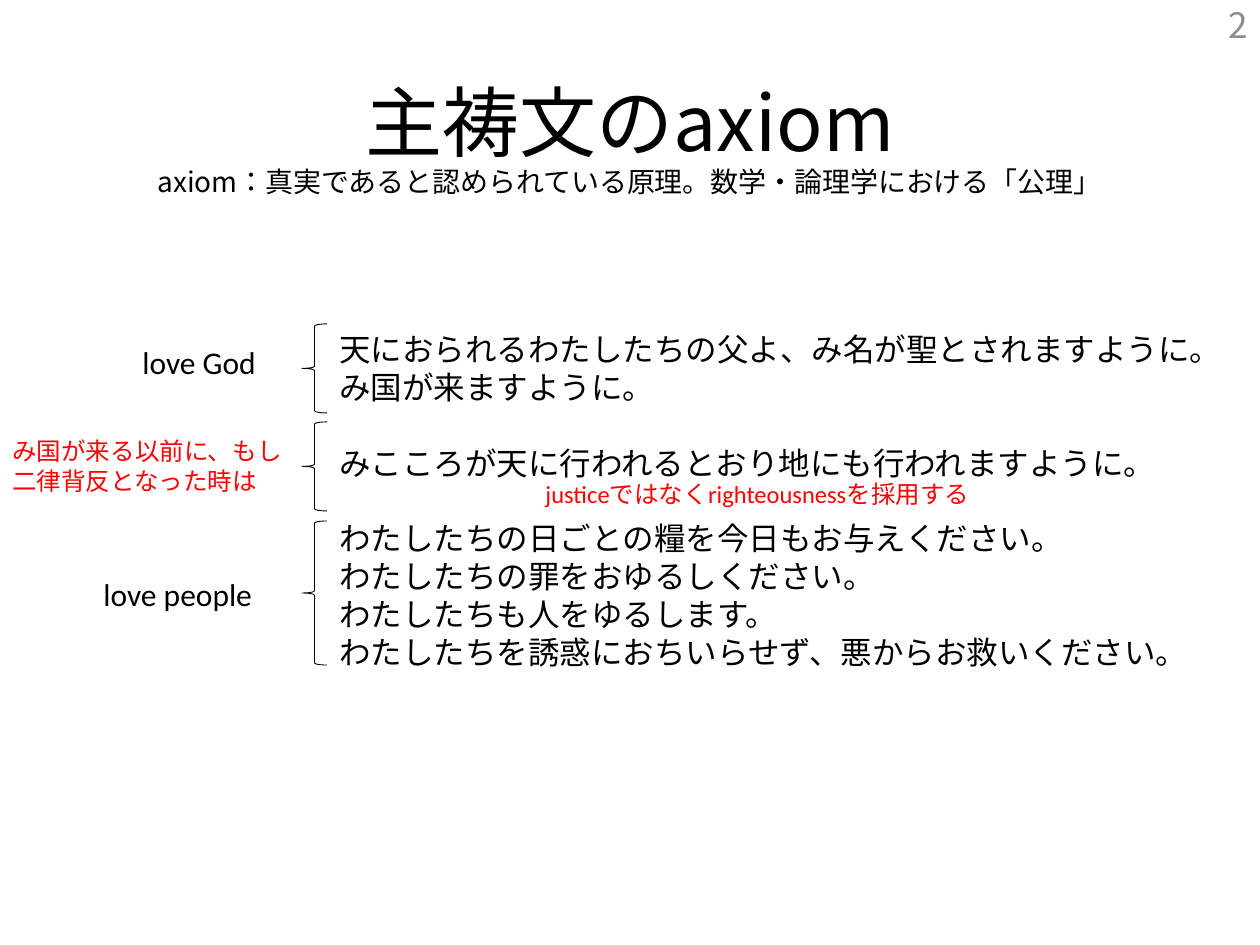
from pptx import Presentation
from pptx.dml.color import RGBColor
from pptx.enum.shapes import MSO_SHAPE as SHAPE
from pptx.enum.text import MSO_ANCHOR as ANCHOR, MSO_AUTO_SIZE as AUTO, PP_ALIGN as ALIGN
from pptx.oxml.ns import qn
from pptx.util import Emu, Inches, Pt

BLACK = RGBColor(0, 0, 0)
GREY = RGBColor(0x8C, 0x8C, 0x8C)
RED = RGBColor(0xFF, 0, 0)
LATIN, CJK = "Calibri", "Noto Sans CJK JP"

# Prayer verses grouped by the brace they belong to
VERSES = [
    ["天におられるわたしたちの父よ、み名が聖とされますように。",
     "み国が来ますように。"],
    ["みこころが天に行われるとおり地にも行われますように。"],
    ["わたしたちの日ごとの糧を今日もお与えください。",
     "わたしたちの罪をおゆるしください。",
     "わたしたちも人をゆるします。",
     "わたしたちを誘惑におちいらせず、悪からお救いください。"],
]


def px(n):
    return Emu(round(n * 914400 / 126))


def style(p, size, color=BLACK, font=LATIN):
    for r in p.runs:
        r.font.size = Pt(size)
        r.font.name = font
        r.font.color.rgb = color
        rPr = r.font._element
        rPr.set("lang", "ja-JP")
        if font == CJK:
            ea = rPr.makeelement(qn("a:ea"), {"typeface": CJK})
            rPr.find(qn("a:latin")).addnext(ea)


def add_text(slide, box, text, size, color=BLACK, font=LATIN, wrap=False):
    sp = slide.shapes.add_textbox(*map(px, box))
    tf = sp.text_frame
    tf.word_wrap = wrap
    tf.text = text
    for p in tf.paragraphs:
        style(p, size, color, font)
    return tf


def add_title(slide, box):
    sp = slide.shapes.title
    sp.left, sp.top, sp.width, sp.height = map(px, box)
    tf = sp.text_frame
    tf.text = ("主祷文のaxiom\v"
               "axiom：真実であると認められている原理。数学・論理学における「公理」")
    tf.auto_size = AUTO.NONE
    tf.vertical_anchor = ANCHOR.MIDDLE
    p = tf.paragraphs[0]
    p.alignment = ALIGN.CENTER
    p.line_spacing = 0.9
    style(p, 44, font=CJK)
    p.runs[1].font.size = Pt(16)


def add_page_number(slide, box):
    tf = add_text(slide, box, "2", 20, GREY, CJK)
    tf.word_wrap = True
    tf.vertical_anchor = ANCHOR.MIDDLE
    tf.paragraphs[0].alignment = ALIGN.RIGHT


def add_brace(slide, box):
    sp = slide.shapes.add_shape(SHAPE.LEFT_BRACE, *map(px, box))
    sp.shadow.inherit = False
    sp.fill.background()
    sp.line.color.rgb = BLACK
    sp.line.width = Pt(0.5)


def add_prayer(slide, box):
    x, y, w, h = box
    # Verses, with one line of space between groups
    tf = add_text(slide, (x + 25, y, w - 25, h),
                  "\n".join(line for group in VERSES for line in group), 18)
    tf.auto_size = AUTO.SHAPE_TO_FIT_TEXT
    first = 0
    for group in VERSES[:-1]:
        first += len(group)
        tf.paragraphs[first].space_before = Pt(21.6)

    # One brace for each group
    for top, height in ((0, 89), (98, 89), (197, 144)):
        add_brace(slide, (x, y + top, 25, height))

    # Group labels
    add_text(slide, (x - 172, y + 13, 154, 50), "love God", 18)
    add_text(slide, (x - 211, y + 245, 193, 50), "love people", 18)

    # Red remarks on the middle verse
    add_text(slide, (x - 302, y + 106, 304, 72),
             "み国が来る以前に、もし二律背反となった時は", 14, RED, wrap=True)
    add_text(slide, (x + 231, y + 149, 499, 43),
             "justiceではなくrighteousnessを採用する", 14, RED)


def main():
    prs = Presentation()
    prs.slide_width, prs.slide_height = Inches(10), Inches(7.5)
    slide = prs.slides.add_slide(prs.slide_layouts[5])
    add_title(slide, (87, 50, 1086, 183))
    add_page_number(slide, (977, 0, 283, 50))
    add_prayer(slide, (302, 324, 941, 357))
    prs.save("out.pptx")


if __name__ == "__main__":
    main()
